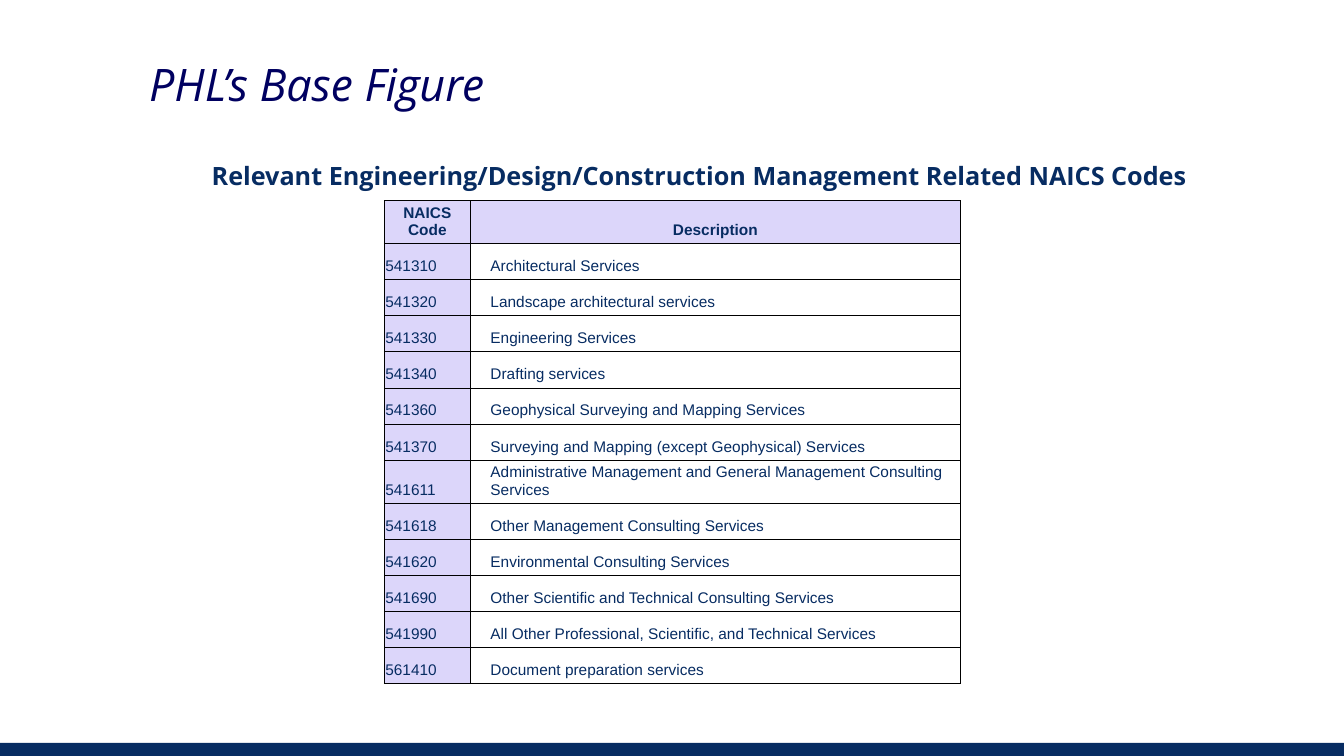
"""Build the slide that lists the NAICS codes behind PHL's base figure."""
from lxml import etree
from pptx import Presentation
from pptx.dml.color import RGBColor
from pptx.enum.shapes import MSO_SHAPE
from pptx.enum.text import MSO_ANCHOR, PP_ALIGN
from pptx.oxml.ns import qn
from pptx.util import Cm, Pt

RECTANGLE = MSO_SHAPE.RECTANGLE
BOTTOM = MSO_ANCHOR.BOTTOM
LEFT, CENTER = PP_ALIGN.LEFT, PP_ALIGN.CENTER

COLORS = {"title": "000060", "navy": "072C62", "lilac": "DCD6FA", "border": "000000"}
HEADER = ("NAICS Code", "Description")
SERVICES = [
    ("541310", "Architectural Services"),
    ("541320", "Landscape architectural services"),
    ("541330", "Engineering Services"),
    ("541340", "Drafting services"),
    ("541360", "Geophysical Surveying and Mapping Services"),
    ("541370", "Surveying and Mapping (except Geophysical) Services"),
    ("541611", "Administrative Management and General Management Consulting Services"),
    ("541618", "Other Management Consulting Services"),
    ("541620", "Environmental Consulting Services"),
    ("541690", "Other Scientific and Technical Consulting Services"),
    ("541990", "All Other Professional, Scientific, and Technical Services"),
    ("561410", "Document preparation services"),
]
COLUMN_WIDTHS = (2.18, 12.34)
ROW_HEIGHT = 0.91


def color(name):
    """Return the named colour."""
    return RGBColor.from_string(COLORS[name])


def style_paragraph(paragraph, name, size, shade, align=LEFT, bold=False, italic=False):
    """Set the font and alignment of a paragraph."""
    paragraph.alignment = align
    font = paragraph.font
    font.name, font.size = name, Pt(size)
    font.bold, font.italic = bold, italic
    font.color.rgb = color(shade)


def add_text(page, text, left, top, width, height, **style):
    """Add a wrapping text box with one styled paragraph and return the paragraph."""
    box = page.shapes.add_textbox(Cm(left), Cm(top), Cm(width), Cm(height))
    box.text_frame.word_wrap = True
    paragraph = box.text_frame.paragraphs[0]
    paragraph.text = text
    style_paragraph(paragraph, "Open Sans", **style)
    return paragraph


def add_footer_bar(page, width):
    """Add the navy bar along the bottom edge."""
    bar = page.shapes.add_shape(RECTANGLE, 0, Cm(18.72), width, Cm(0.33))
    bar.shadow.inherit = False
    bar.fill.solid()
    bar.fill.fore_color.rgb = color("navy")
    bar.line.fill.background()


def add_borders(cell):
    """Draw a thin line on all four sides of a cell."""
    properties = cell._tc.get_or_add_tcPr()
    for side in ("a:lnL", "a:lnR", "a:lnT", "a:lnB"):
        line = etree.SubElement(properties, qn(side), w=str(Pt(0.5)))
        fill = etree.SubElement(line, qn("a:solidFill"))
        etree.SubElement(fill, qn("a:srgbClr"), val=COLORS["border"])


def fill_cell(cell, text, is_header, is_code):
    """Write and format one table cell."""
    shaded = is_header or is_code
    cell.text = text
    cell.vertical_anchor = BOTTOM
    cell.margin_left = Cm(0.03 if shaded else 0.5)
    cell.margin_top = cell.margin_right = Cm(0.03)
    cell.margin_bottom = Cm(0.12)
    add_borders(cell)
    if shaded:
        cell.fill.solid()
        cell.fill.fore_color.rgb = color("lilac")
    else:
        cell.fill.background()
    style_paragraph(cell.text_frame.paragraphs[0], "Arial", 11, "navy",
                    align=CENTER if is_header else LEFT, bold=is_header)


def add_code_table(page, left, top):
    """Add the table of codes and descriptions."""
    rows = [HEADER, *SERVICES]
    table = page.shapes.add_table(
        len(rows), len(HEADER), Cm(left), Cm(top),
        Cm(sum(COLUMN_WIDTHS)), Cm(ROW_HEIGHT * len(rows))).table
    table.first_row = table.horz_banding = False
    for column, width in zip(table.columns, COLUMN_WIDTHS):
        column.width = Cm(width)
    for row_index, texts in enumerate(rows):
        table.rows[row_index].height = Cm(ROW_HEIGHT)
        for column_index, text in enumerate(texts):
            fill_cell(table.cell(row_index, column_index), text,
                      is_header=row_index == 0, is_code=column_index == 0)


def main():
    """Build and save the deck."""
    deck = Presentation()
    deck.slide_width, deck.slide_height = Cm(33.87), Cm(19.05)
    page = deck.slides.add_slide(deck.slide_layouts[6])
    add_footer_bar(page, deck.slide_width)
    add_text(page, "PHL’s Base Figure", 3.51, 1.3, 19.08, 1.6,
             size=32, shade="title", italic=True)
    heading = add_text(
        page, "Relevant Engineering/Design/Construction Management Related NAICS Codes",
        3.02, 4.01, 29.21, 12.85, size=18, shade="navy", align=CENTER, bold=True)
    heading.line_spacing = 0.9
    add_code_table(page, 9.68, 5.05)
    deck.save("out.pptx")


if __name__ == "__main__":
    main()
